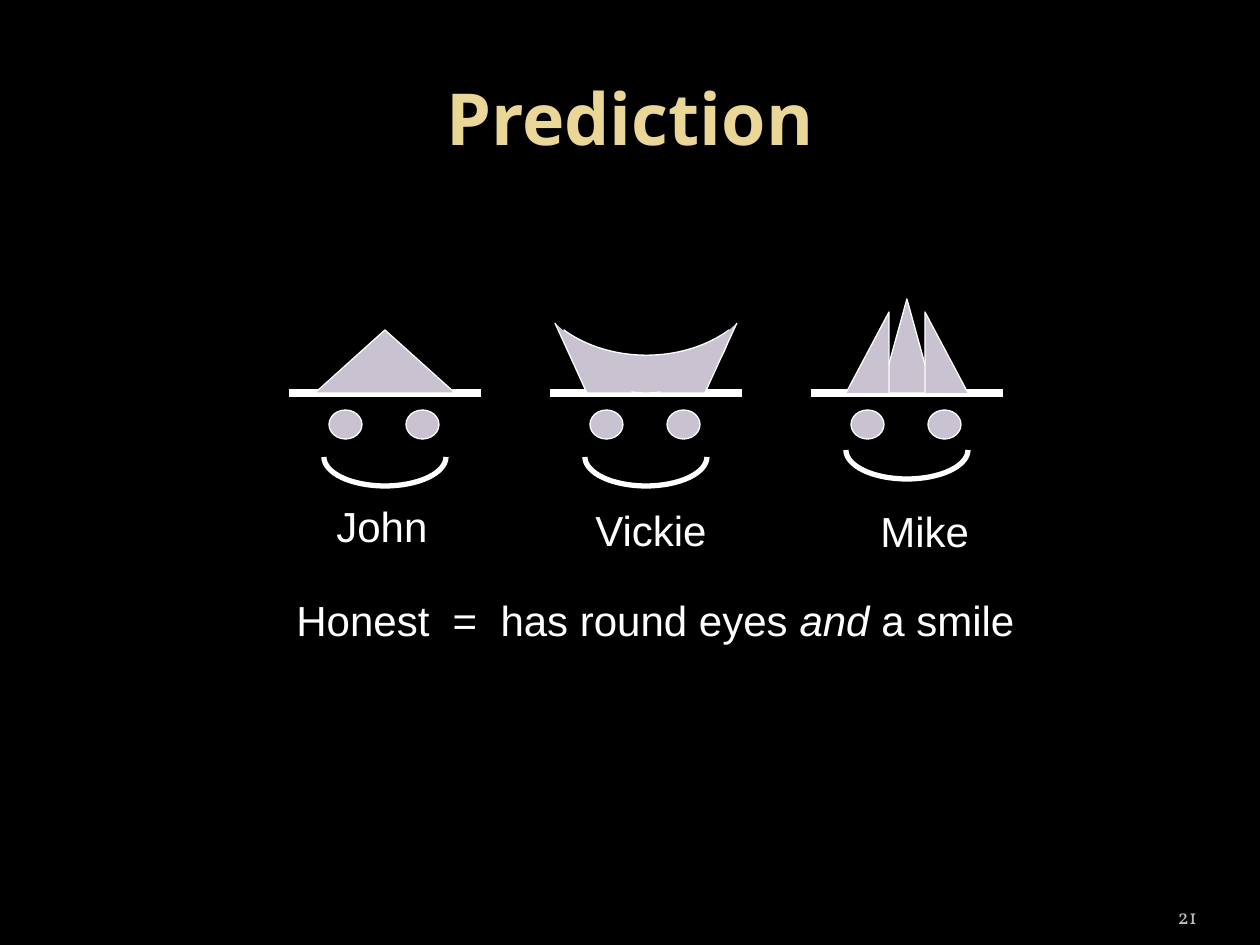
from math import cos, pi, sin

from lxml.etree import SubElement
from pptx import Presentation
from pptx.dml.color import RGBColor
from pptx.enum.shapes import MSO_CONNECTOR, MSO_SHAPE
from pptx.enum.text import MSO_ANCHOR, PP_ALIGN
from pptx.oxml.ns import qn
from pptx.util import Pt

PX = 914400 // 126
WHITE, LILAC, GOLD, GREY = "FFFFFF", "C9C2D1", "EAD696", "BDBDBD"


def color(hex_string):
    return RGBColor.from_string(hex_string)


def emu(*lengths):
    return [round(length * PX) for length in lengths]


class FaceSlide:
    """Holds the slide, the group being drawn into and the shared style."""

    def __init__(self, prs):
        self.slide = prs.slides.add_slide(prs.slide_layouts[6])
        self.shapes = self.slide.shapes
        background = self.slide.background.fill
        background.solid()
        background.fore_color.rgb = color("000000")

    def start_group(self):
        self.shapes = self.slide.shapes.add_group_shape().shapes

    def end_group(self):
        self.shapes = self.slide.shapes

    def style(self, shape, fill=LILAC, width=0.75):
        shape.shadow.inherit = False
        if fill:
            shape.fill.solid()
            shape.fill.fore_color.rgb = color(fill)
        else:
            shape.fill.background()
        shape.line.color.rgb = color(WHITE)
        shape.line.width = Pt(width)

    def preset(self, kind, left, top, width, height):
        shape = self.shapes.add_shape(kind, *emu(left, top, width, height))
        self.style(shape)
        return shape

    def outline(self, points, **look):
        start, *rest = [emu(x, y) for x, y in points]
        builder = self.shapes.build_freeform(*start)
        builder.add_line_segments(rest, close=False)
        self.style(builder.convert_to_shape(), **look)

    def line(self, x1, y1, x2, y2, width):
        line = self.shapes.add_connector(MSO_CONNECTOR.STRAIGHT, *emu(x1, y1, x2, y2))
        line.line.color.rgb = color(WHITE)
        line.line.width = Pt(width)
        SubElement(line._element.spPr, qn("a:effectLst"))

    def text(self, box, runs, size=24, font="Arial", ink=WHITE, bold=False,
             align=PP_ALIGN.LEFT, anchor=MSO_ANCHOR.TOP, wrap=False, side_inset=None):
        frame = self.shapes.add_textbox(*emu(*box)).text_frame
        frame.word_wrap = wrap
        frame.vertical_anchor = anchor
        if side_inset is not None:
            frame.margin_left = frame.margin_right = side_inset
        paragraph = frame.paragraphs[0]
        paragraph.alignment = align
        for words, italic in runs:
            run = paragraph.add_run()
            run.text = words
            run.font.name = font
            run.font.size = Pt(size)
            run.font.bold = bold
            run.font.italic = italic
            run.font.color.rgb = color(ink)

    def eyes(self, center):
        for offset in (-56, 21):
            self.preset(MSO_SHAPE.OVAL, center + offset, 410, 33, 29)

    def smile(self, center, top):
        steps = 16
        for side in (1, -1):
            angles = [pi / 2 * (1 - i / steps) for i in range(steps + 1)]
            self.outline([(center + side * 61 * cos(a), top + 29 * sin(a)) for a in angles],
                         fill=None, width=3)

    def brim(self, center):
        self.line(center - 96, BRIM, center + 96, BRIM, 4.5)

    def pointed_hat(self, center):
        self.preset(MSO_SHAPE.ISOSCELES_TRIANGLE, center - 70, BRIM - 63, 140, 63)

    def curved_hat(self, center):
        moon = self.preset(MSO_SHAPE.MOON, center - 31, 279, 63, 165)
        moon.adjustments[0] = 0.6
        moon.rotation = 270
        for side in (-1, 1):
            self.outline([(center + side * 91, BRIM - 70), (center + side * 59, BRIM),
                          (center + side * 13, BRIM)])

    def crown_hat(self, center):
        self.preset(MSO_SHAPE.ISOSCELES_TRIANGLE, center - 26, BRIM - 94, 52, 94)
        for side in (1, -1):
            self.outline([(center + side * 18, BRIM), (center + side * 18, BRIM - 81),
                          (center + side * 61, BRIM)])


BRIM = 393


def main():
    prs = Presentation()
    prs.slide_width, prs.slide_height = emu(1260, 945)
    page = FaceSlide(prs)

    # Title and slide number
    page.text((63, 38, 1134, 157), [("Prediction", False)], size=41, font="Open Sans",
              ink=GOLD, bold=True, align=PP_ALIGN.CENTER, anchor=MSO_ANCHOR.MIDDLE, wrap=True)
    page.text((1092, 885, 105, 50), [("21", False)], size=12, font="Vollkorn", ink=GREY,
              align=PP_ALIGN.RIGHT, anchor=MSO_ANCHOR.BOTTOM, wrap=True, side_inset=0)

    # Faces: name, name box, top of smile, hat
    faces = [
        ("John", (324, 494, 117, 63), 457, page.pointed_hat),
        ("Vickie", (583, 498, 137, 63), 457, page.curved_hat),
        ("Mike", (868, 499, 115, 63), 450, page.crown_hat),
    ]
    for index, (name, name_box, smile_top, hat) in enumerate(faces):
        center = 385 + 261 * index
        page.start_group()
        page.eyes(center)
        page.smile(center, smile_top)
        page.brim(center)
        hat(center)
        page.text(name_box, [(name, False)])
        page.end_group()

    # Rule
    page.text((284, 588, 743, 63), [("Honest  =  has round eyes ", False),
                                    ("and ", True), ("a smile", False)])

    prs.save("out.pptx")


if __name__ == "__main__":
    main()
